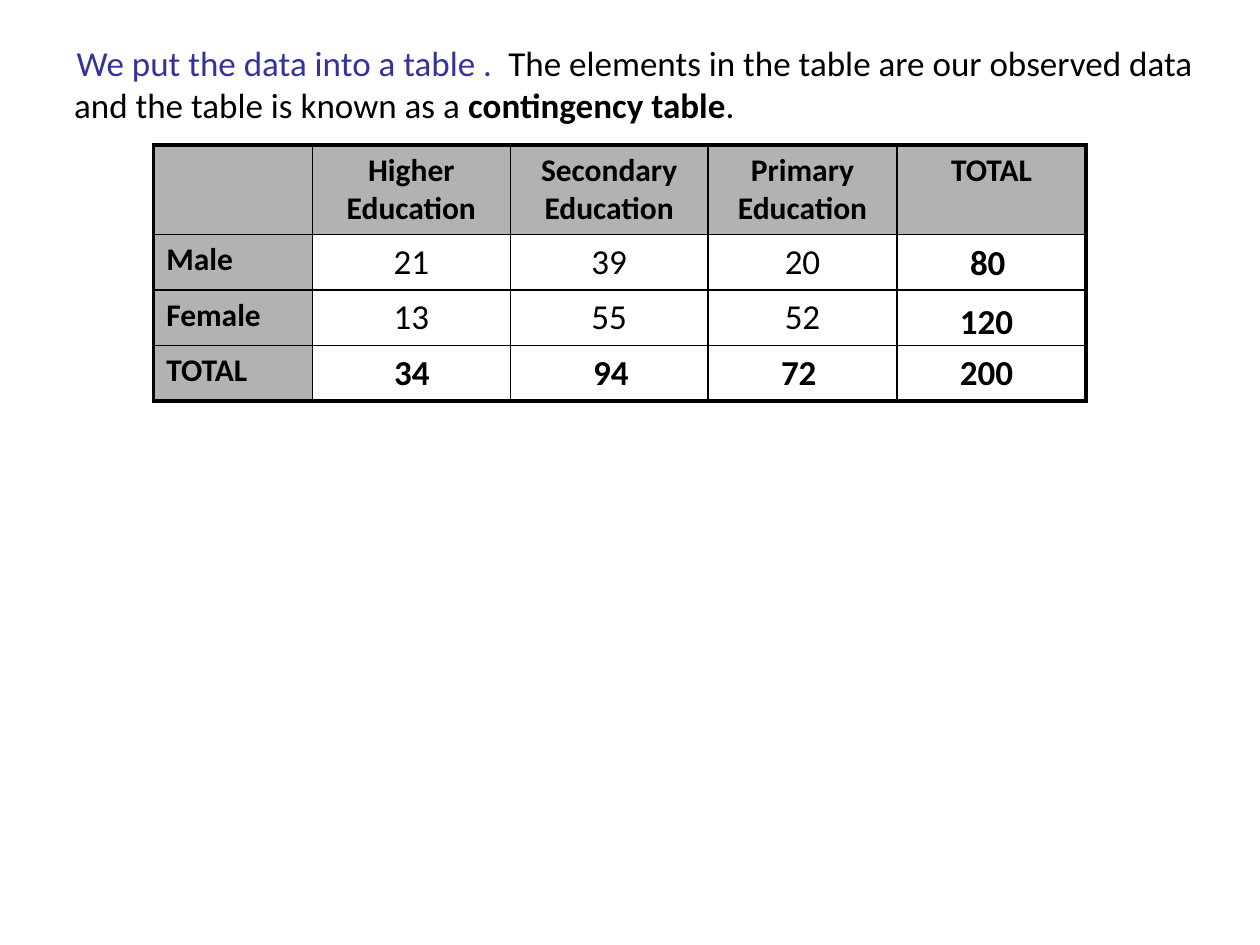
import dataclasses
import typing

import lxml.etree
import pptx
import pptx.dml.color
import pptx.enum.text
import pptx.oxml.ns
import pptx.util

BLACK = "000000"
BLUE = "333399"
GREY = "B2B2B2"
INNER_LINE = 1
OUTER_LINE = 2.25
TABLE_LEFT, TABLE_TOP = 1.22, 1.15
COLUMN_WIDTHS = [1.26, 1.57, 1.57, 1.5, 1.5]
ROW_HEIGHTS = [0.71, 0.44, 0.44, 0.44]
TABLE_ROWS = [
    ["", "Higher Education", "Secondary Education", "Primary Education", "TOTAL"],
    ["Male", "21", "39", "20", ""],
    ["Female", "13", "55", "52", ""],
    ["TOTAL", "", "", "", ""],
]


@dataclasses.dataclass
class TextRun:
    text: str
    color: str = BLACK
    bold: bool = False
    size: int = 20


@dataclasses.dataclass
class TextBox:
    left: float
    top: float
    width: float
    height: float
    runs: list[TextRun]


def total_box(left: float, top: float, text: str) -> TextBox:
    return TextBox(left, top, 1.02, 0.43, [TextRun(text, bold=True)])


INTRODUCTION = TextBox(0.2, 0.28, 9.53, 0.77, [
    TextRun("We put the data into a table .  ", BLUE),
    TextRun("The elements in the table are our observed data and the table is known as a "),
    TextRun("contingency table", bold=True),
    TextRun("."),
])
TOTALS = [
    total_box(3.03, 2.73, "34"),
    total_box(4.61, 2.73, "94"),
    total_box(6.1, 2.73, "72"),
    total_box(7.6, 1.86, "80"),
    total_box(7.52, 2.33, "120"),
    total_box(7.52, 2.73, "200"),
]


def rgb(color: str) -> pptx.dml.color.RGBColor:
    return pptx.dml.color.RGBColor.from_string(color)


def set_attributes(target: typing.Any, values: dict[str, typing.Any]) -> None:
    for name, value in values.items():
        setattr(target, name, value)


def add_run(paragraph: typing.Any, text_run: TextRun) -> None:
    run = paragraph.add_run()
    run.text = text_run.text
    set_attributes(run.font, {
        "name": "Calibri",
        "size": pptx.util.Pt(text_run.size),
        "bold": text_run.bold,
    })
    run.font.color.rgb = rgb(text_run.color)


def add_text_box(slide: typing.Any, box: TextBox) -> typing.Any:
    shape = slide.shapes.add_textbox(
        *map(pptx.util.Inches, (box.left, box.top, box.width, box.height)))
    shape.text_frame.word_wrap = True
    paragraph = shape.text_frame.paragraphs[0]
    for text_run in box.runs:
        add_run(paragraph, text_run)
    return shape


def set_borders(cell: typing.Any, widths: dict[str, float]) -> None:
    qualified = pptx.oxml.ns.qn
    properties = cell._tc.get_or_add_tcPr()
    for side, width in widths.items():
        line = lxml.etree.SubElement(
            properties, qualified(f"a:ln{side}"), w=str(int(pptx.util.Pt(width))))
        fill = lxml.etree.SubElement(line, qualified("a:solidFill"))
        lxml.etree.SubElement(fill, qualified("a:srgbClr"), val=BLACK)


def format_cell(cell: typing.Any, text: str, row: int, column: int) -> None:
    outer_sides = {
        "L": column == 0,
        "R": column == len(COLUMN_WIDTHS) - 1,
        "T": row == 0,
        "B": row == len(ROW_HEIGHTS) - 1,
    }
    set_borders(cell, {
        side: OUTER_LINE if is_outer else INNER_LINE
        for side, is_outer in outer_sides.items()
    })
    is_heading = row == 0 or column == 0
    if is_heading:
        cell.fill.solid()
        cell.fill.fore_color.rgb = rgb(GREY)
    else:
        cell.fill.background()
    if text:
        paragraph = cell.text_frame.paragraphs[0]
        alignment = pptx.enum.text.PP_ALIGN
        paragraph.alignment = alignment.CENTER if column else alignment.LEFT
        add_run(paragraph, TextRun(text, bold=is_heading, size=18 if is_heading else 20))


def add_contingency_table(slide: typing.Any) -> None:
    frame = slide.shapes.add_table(
        len(ROW_HEIGHTS), len(COLUMN_WIDTHS),
        *map(pptx.util.Inches,
             (TABLE_LEFT, TABLE_TOP, sum(COLUMN_WIDTHS), sum(ROW_HEIGHTS))))
    table = frame.table
    set_attributes(table, {"first_row": False, "horz_banding": False})
    for column, width in zip(table.columns, COLUMN_WIDTHS):
        column.width = pptx.util.Inches(width)
    for row, height in zip(table.rows, ROW_HEIGHTS):
        row.height = pptx.util.Inches(height)
    for row_index, texts in enumerate(TABLE_ROWS):
        for column_index, text in enumerate(texts):
            format_cell(table.cell(row_index, column_index), text, row_index, column_index)


def main() -> None:
    presentation = pptx.Presentation()
    set_attributes(presentation, {
        "slide_width": pptx.util.Inches(10),
        "slide_height": pptx.util.Inches(7.5),
    })
    slide = presentation.slides.add_slide(presentation.slide_layouts[6])
    add_contingency_table(slide)
    introduction = add_text_box(slide, INTRODUCTION)
    paragraph_properties = introduction.text_frame.paragraphs[0]._p.get_or_add_pPr()
    paragraph_properties.set("marL", str(int(pptx.util.Inches(0.29))))
    paragraph_properties.set("indent", str(int(pptx.util.Inches(0.02))))
    for box in TOTALS:
        add_text_box(slide, box)
    presentation.save("out.pptx")


if __name__ == "__main__":
    main()
